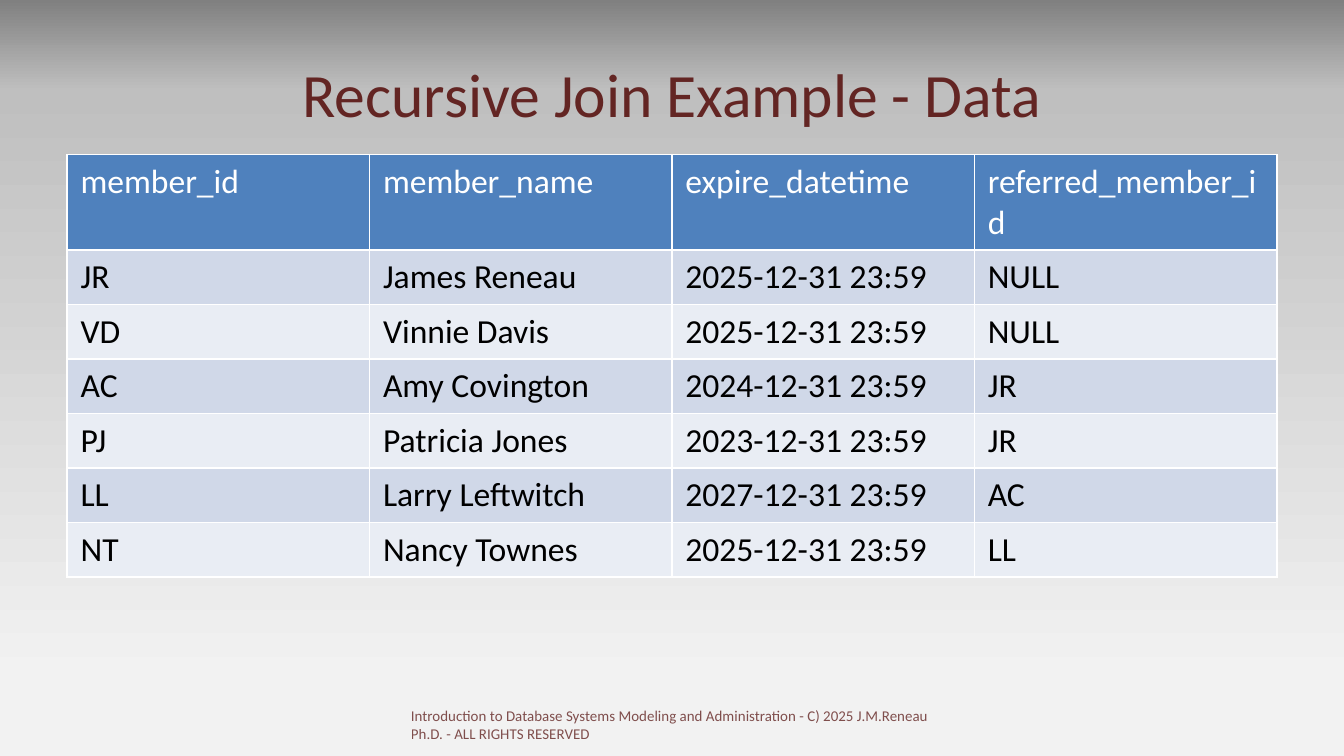
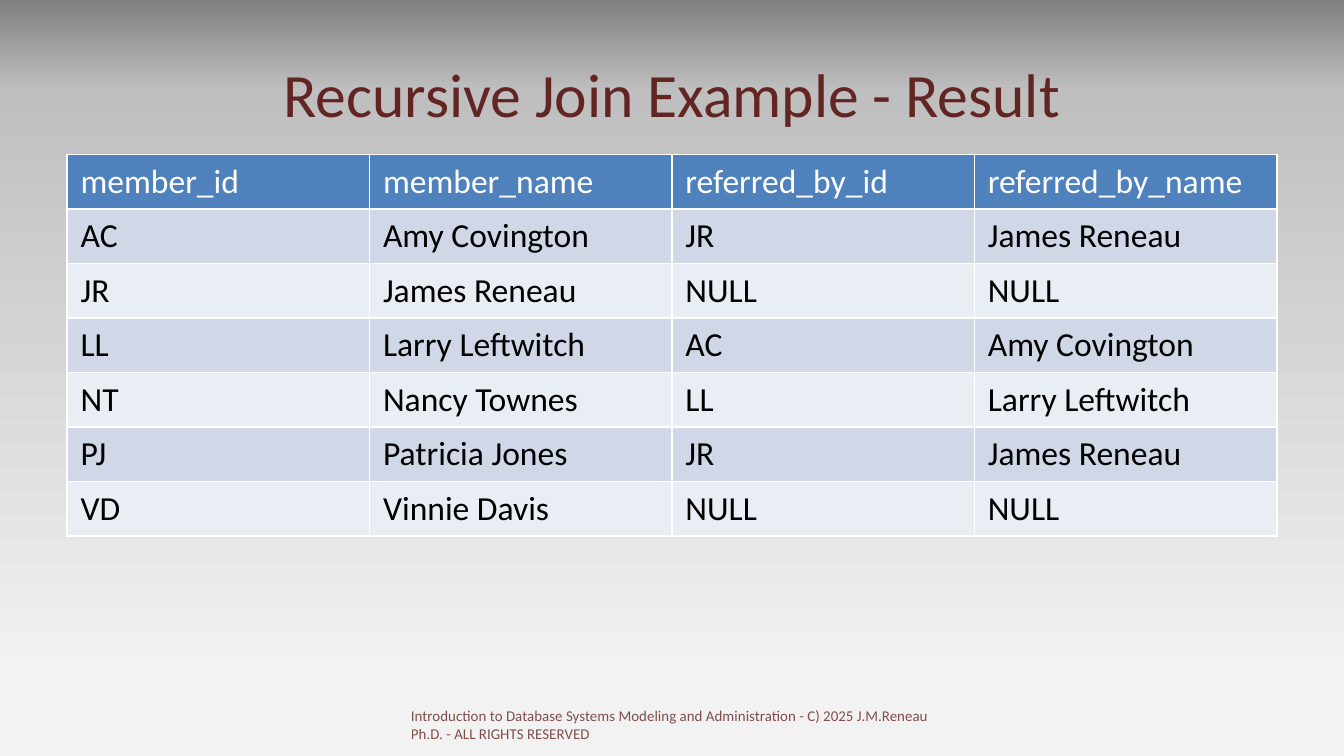
from lxml import etree
from pptx import Presentation
from pptx.dml.color import RGBColor
from pptx.enum.text import MSO_ANCHOR, PP_ALIGN
from pptx.oxml.ns import qn
from pptx.util import Inches, Pt

MID = MSO_ANCHOR.MIDDLE
LEFT, CENTER = PP_ALIGN.LEFT, PP_ALIGN.CENTER

WINE = RGBColor(0x63, 0x25, 0x23)
BLUE = RGBColor(0x4F, 0x81, 0xBD)
WHITE = RGBColor(0xFF, 0xFF, 0xFF)
BLACK = RGBColor(0, 0, 0)
BANDS = [RGBColor(0xE9, 0xED, 0xF4), RGBColor(0xD0, 0xD8, 0xE8)]
SHADES = [
    (0, RGBColor(0x80, 0x80, 0x80)),
    (12, RGBColor(0xBF, 0xBF, 0xBF)),
    (90, RGBColor(0xF2, 0xF2, 0xF2)),
]

WIDE = Inches(10)
HIGH = WIDE * 9 // 16
EDGE = Inches(0.5)
SPAN = WIDE - 2 * EDGE
ROW = Inches(0.4)
FOOT = (
    "Introduction to Database Systems Modeling and Administration"
    " - C) 2025 J.M.Reneau Ph.D. - ALL RIGHTS RESERVED"
)

PAGES = [
    ("Recursive Join Example - Data", [
        ("member_id", "member_name", "expire_datetime", "referred_member_id"),
        ("JR", "James Reneau", "2025-12-31 23:59", "NULL"),
        ("VD", "Vinnie Davis", "2025-12-31 23:59", "NULL"),
        ("AC", "Amy Covington", "2024-12-31 23:59", "JR"),
        ("PJ", "Patricia Jones", "2023-12-31 23:59", "JR"),
        ("LL", "Larry Leftwitch", "2027-12-31 23:59", "AC"),
        ("NT", "Nancy Townes", "2025-12-31 23:59", "LL"),
    ]),
    ("Recursive Join Example - Result", [
        ("member_id", "member_name", "referred_by_id", "referred_by_name"),
        ("AC", "Amy Covington", "JR", "James Reneau"),
        ("JR", "James Reneau", "NULL", "NULL"),
        ("LL", "Larry Leftwitch", "AC", "Amy Covington"),
        ("NT", "Nancy Townes", "LL", "Larry Leftwitch"),
        ("PJ", "Patricia Jones", "JR", "James Reneau"),
        ("VD", "Vinnie Davis", "NULL", "NULL"),
    ]),
]


def write(frame, text, size=18, color=BLACK, align=LEFT, alpha=None):
    frame.word_wrap = True
    para = frame.paragraphs[0]
    para.alignment = align
    run = para.add_run()
    run.text = text
    run.font.size = Pt(size)
    run.font.name = "Calibri"
    run.font.color.rgb = color
    if alpha:
        tint = run.font.fill._xPr.find(".//" + qn("a:srgbClr"))
        etree.SubElement(tint, qn("a:alpha"), val=str(alpha * 1000))


def rule(cell, side):
    props = cell._tc.get_or_add_tcPr()
    line = etree.SubElement(props, qn("a:ln" + side), w=str(Pt(1)))
    fill = etree.SubElement(line, qn("a:solidFill"))
    etree.SubElement(fill, qn("a:srgbClr"), val=str(WHITE))


prs = Presentation()
prs.slide_width, prs.slide_height = WIDE, HIGH

master = prs.slide_master
back = master.background.fill
back.gradient()
back.gradient_angle = 270
stops = master.element.find(".//" + qn("a:gsLst"))
for stop in list(stops):
    stops.remove(stop)
for pos, shade in SHADES:
    stop = etree.SubElement(stops, qn("a:gs"), pos=str(pos * 1000))
    etree.SubElement(stop, qn("a:srgbClr"), val=str(shade))

for name, rows in PAGES:
    slide = prs.slides.add_slide(prs.slide_layouts[5])
    title = slide.shapes.title
    title.left, title.top = EDGE, Inches(0.23)
    title.width, title.height = SPAN, Inches(0.93)
    title.text_frame.vertical_anchor = MID
    write(title.text_frame, name, size=33, color=WINE, align=CENTER)

    grid = slide.shapes.add_table(
        len(rows), len(rows[0]), EDGE, Inches(1.15), SPAN, ROW * len(rows)
    ).table
    for r, row in enumerate(rows):
        for c, text in enumerate(row):
            cell = grid.cell(r, c)
            for side in "LRTB":
                rule(cell, side)
            cell.fill.solid()
            cell.fill.fore_color.rgb = BANDS[r % 2] if r else BLUE
            write(cell.text_frame, text, color=BLACK if r else WHITE)

    foot = slide.shapes.add_textbox(
        Inches(2.96), Inches(5.21), Inches(4.06), Inches(0.3)
    )
    write(foot.text_frame, FOOT, size=8, color=WINE, alpha=80)

prs.save("out.pptx")
